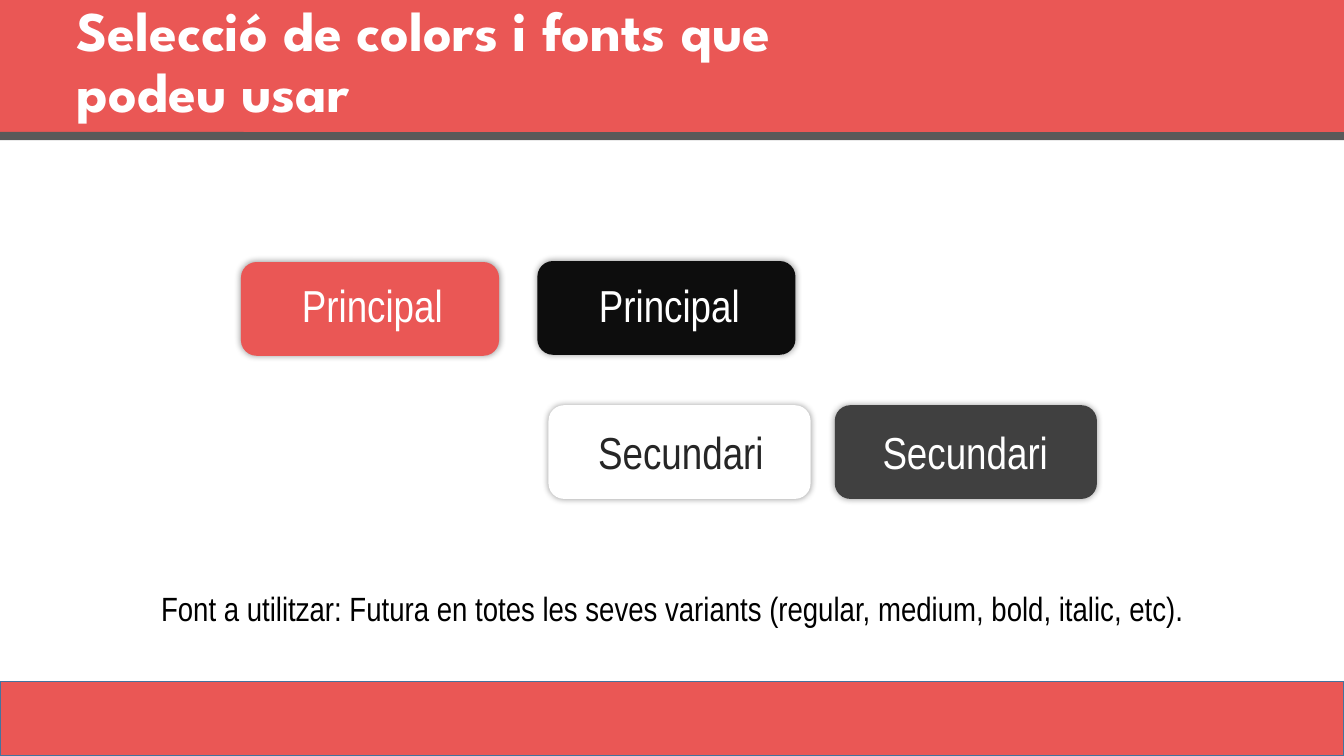
from dataclasses import dataclass

from lxml import etree
from pptx import Presentation
from pptx.dml.color import RGBColor
from pptx.enum.shapes import MSO_SHAPE
from pptx.enum.text import MSO_ANCHOR, MSO_AUTO_SIZE, PP_ALIGN
from pptx.oxml.ns import qn
from pptx.shapes.autoshape import Shape
from pptx.slide import Slide
from pptx.util import Inches, Pt

CORAL = RGBColor(0xEA, 0x57, 0x55)
BLUE = RGBColor(0x43, 0x73, 0x9E)
GRAY = RGBColor(0x59, 0x59, 0x59)
DARK_GRAY = RGBColor(0x40, 0x40, 0x40)
INK = RGBColor(0x26, 0x26, 0x26)
NEAR_BLACK = RGBColor(0x0D, 0x0D, 0x0D)
BLACK = RGBColor(0, 0, 0)
WHITE = RGBColor(0xFF, 0xFF, 0xFF)
BODY_FONT = "Arial Narrow"
TITLE_FONT = "League Spartan"


@dataclass(frozen=True)
class Box:
    left: float
    top: float
    width: float
    height: float

    def emu(self) -> tuple[int, int, int, int]:
        return (Inches(self.left), Inches(self.top),
                Inches(self.width), Inches(self.height))


@dataclass(frozen=True)
class Swatch:
    box: Box
    fill: RGBColor
    label: str
    label_box: Box
    label_color: RGBColor = WHITE


SWATCHES = [
    Swatch(Box(2.39, 2.6, 2.56, 0.93), CORAL, "Principal", Box(2.76, 2.71, 1.87, 0.64)),
    Swatch(Box(5.33, 2.59, 2.56, 0.93), NEAR_BLACK, "Principal", Box(5.7, 2.71, 1.88, 0.64)),
    Swatch(Box(5.44, 4.02, 2.6, 0.93), WHITE, "Secundari", Box(5.72, 4.16, 2.07, 0.64), INK),
    Swatch(Box(8.28, 4.02, 2.6, 0.93), DARK_GRAY, "Secundari", Box(8.56, 4.16, 2.03, 0.64)),
]


def add_block(slide: Slide, kind: MSO_SHAPE, box: Box, fill: RGBColor) -> Shape:
    sp = slide.shapes.add_shape(kind, *box.emu())
    sp.shadow.inherit = False
    sp.fill.solid()
    sp.fill.fore_color.rgb = fill
    sp.line.fill.background()
    return sp


def add_glow_shadow(sp: Shape) -> None:
    effects = sp._element.spPr.find(qn("a:effectLst"))
    shadow = etree.SubElement(effects, qn("a:outerShdw"), blurRad=str(Pt(5)),
                              dist="0", dir="0", algn="ctr", rotWithShape="0")
    color = etree.SubElement(shadow, qn("a:srgbClr"), val=str(BLACK))
    etree.SubElement(color, qn("a:alpha"), val="40000")


def add_text(slide: Slide, box: Box, text: str, size: int, color: RGBColor) -> None:
    tf = slide.shapes.add_textbox(*box.emu()).text_frame
    tf.word_wrap = True
    tf.auto_size = MSO_AUTO_SIZE.SHAPE_TO_FIT_TEXT
    p = tf.paragraphs[0]
    p.text = text
    p.alignment = PP_ALIGN.CENTER
    p.font.name = BODY_FONT
    p.font.size = Pt(size)
    p.font.color.rgb = color


def add_bars(slide: Slide) -> None:
    footer = add_block(slide, MSO_SHAPE.RECTANGLE, Box(0, 6.76, 13.33, 0.74), CORAL)
    footer.line.color.rgb = BLUE
    footer.line.width = Pt(1)
    add_block(slide, MSO_SHAPE.RECTANGLE, Box(-0.1, -0.07, 13.56, 1.38), CORAL)
    add_block(slide, MSO_SHAPE.ROUNDED_RECTANGLE, Box(-0.46, 1.31, 14.56, 0.08), GRAY)


def set_title(slide: Slide, text: str) -> None:
    title = slide.shapes.title
    title.left, title.top, title.width, title.height = Box(0.66, -0.09, 7.84, 1.45).emu()
    slide.shapes._spTree.append(title._element)
    tf = title.text_frame
    tf.word_wrap = True
    tf.auto_size = MSO_AUTO_SIZE.NONE
    tf.vertical_anchor = MSO_ANCHOR.MIDDLE
    p = tf.paragraphs[0]
    p.text = text
    p.alignment = PP_ALIGN.LEFT
    p.line_spacing = 0.9
    p.font.name = TITLE_FONT
    p.font.size = Pt(40)
    p.font.bold = True
    p.font.color.rgb = WHITE


def main() -> None:
    prs = Presentation()
    prs.slide_width = Inches(13.33)
    prs.slide_height = Inches(7.5)
    slide = prs.slides.add_slide(prs.slide_layouts[5])
    add_bars(slide)
    for swatch in SWATCHES:
        sp = add_block(slide, MSO_SHAPE.ROUNDED_RECTANGLE, swatch.box, swatch.fill)
        add_glow_shadow(sp)
        add_text(slide, swatch.label_box, swatch.label, 32, swatch.label_color)
    set_title(slide, "Selecció de colors i fonts que podeu usar")
    add_text(slide, Box(1.01, 5.78, 11.31, 0.5),
             "Font a utilitzar: Futura en totes les seves variants "
             "(regular, medium, bold, italic, etc).", 24, BLACK)
    prs.save("out.pptx")


if __name__ == "__main__":
    main()
